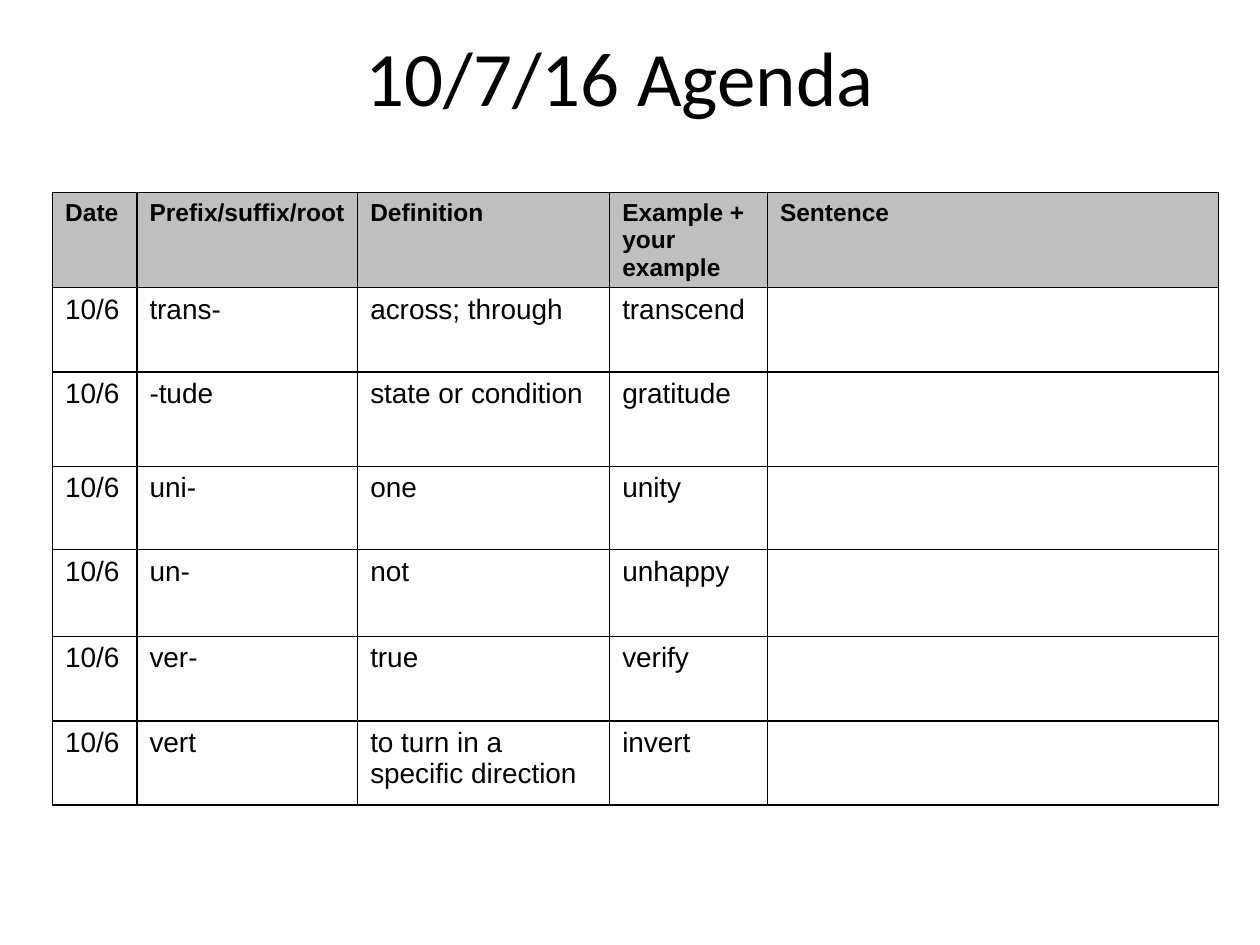
from lxml.etree import SubElement
from pptx import Presentation
from pptx.dml.color import RGBColor
from pptx.enum.text import MSO_ANCHOR, MSO_AUTO_SIZE, PP_ALIGN
from pptx.oxml.ns import qn
from pptx.util import Cm, Pt

COLUMN_WIDTHS = [1.7, 4.45, 5.08, 3.18, 9.09]
ROW_HEIGHTS = [1.7, 1.7, 1.9, 1.68, 1.75, 1.7, 1.7]
HEADINGS = ["Date", "Prefix/suffix/root", "Definition", "Example + your example", "Sentence"]
LESSON_DATE = "10/6"
WORD_PARTS = [
    ("trans-", "across; through", "transcend"),
    ("-tude", "state or condition", "gratitude"),
    ("uni-", "one", "unity"),
    ("un-", "not", "unhappy"),
    ("ver-", "true", "verify"),
    ("vert", "to turn in a specific direction", "invert"),
]


def color(value):
    return RGBColor.from_string(value)


def style_font(paragraph, name, size, bold=False):
    font = paragraph.font
    font.name, font.size, font.bold = name, Pt(size), bold
    font.color.rgb = color("000000")


def add_borders(cell):
    properties = cell._tc.get_or_add_tcPr()
    for position, side in enumerate(("lnL", "lnR", "lnT", "lnB")):
        border = properties.makeelement(qn(f"a:{side}"), {"w": str(Pt(1))})
        fill = SubElement(border, qn("a:solidFill"))
        SubElement(fill, qn("a:srgbClr"), val="000000")
        properties.insert(position, border)


def place_title(slide, left, top, width, height):
    title = slide.shapes.title
    title.left, title.top, title.width, title.height = map(Cm, (left, top, width, height))
    frame = title.text_frame
    frame.text = "10/7/16 Agenda"
    frame.word_wrap = True
    frame.auto_size = MSO_AUTO_SIZE.NONE
    frame.vertical_anchor = MSO_ANCHOR.MIDDLE
    heading = frame.paragraphs[0]
    heading.alignment = PP_ALIGN.CENTER
    style_font(heading, "Calibri", 44)


def fill_cell(cell, text, is_heading):
    if is_heading:
        cell.fill.solid()
        cell.fill.fore_color.rgb = color("BFBFBF")
    else:
        cell.fill.background()
    cell.text = text
    style_font(cell.text_frame.paragraphs[0], "Arial", 14 if is_heading else 16, is_heading)
    add_borders(cell)


def place_vocabulary(slide, left, top):
    rows = [HEADINGS] + [(LESSON_DATE, *entry, "") for entry in WORD_PARTS]
    vocabulary = slide.shapes.add_table(
        len(rows), len(HEADINGS), Cm(left), Cm(top),
        Cm(sum(COLUMN_WIDTHS)), Cm(sum(ROW_HEIGHTS))).table
    vocabulary.horz_banding = False
    for column, width in zip(vocabulary.columns, COLUMN_WIDTHS):
        column.width = Cm(width)
    for row, height in zip(vocabulary.rows, ROW_HEIGHTS):
        row.height = Cm(height)
    for row_index, entries in enumerate(rows):
        for column_index, text in enumerate(entries):
            fill_cell(vocabulary.cell(row_index, column_index), text, row_index == 0)


def main():
    presentation = Presentation()
    presentation.slide_width, presentation.slide_height = Cm(25.4), Cm(19.05)
    agenda = presentation.slides.add_slide(presentation.slide_layouts[5])
    place_title(agenda, 1.7, 0.76, 21.59, 1.55)
    place_vocabulary(agenda, 1.06, 3.88)
    presentation.save("out.pptx")


if __name__ == "__main__":
    main()
